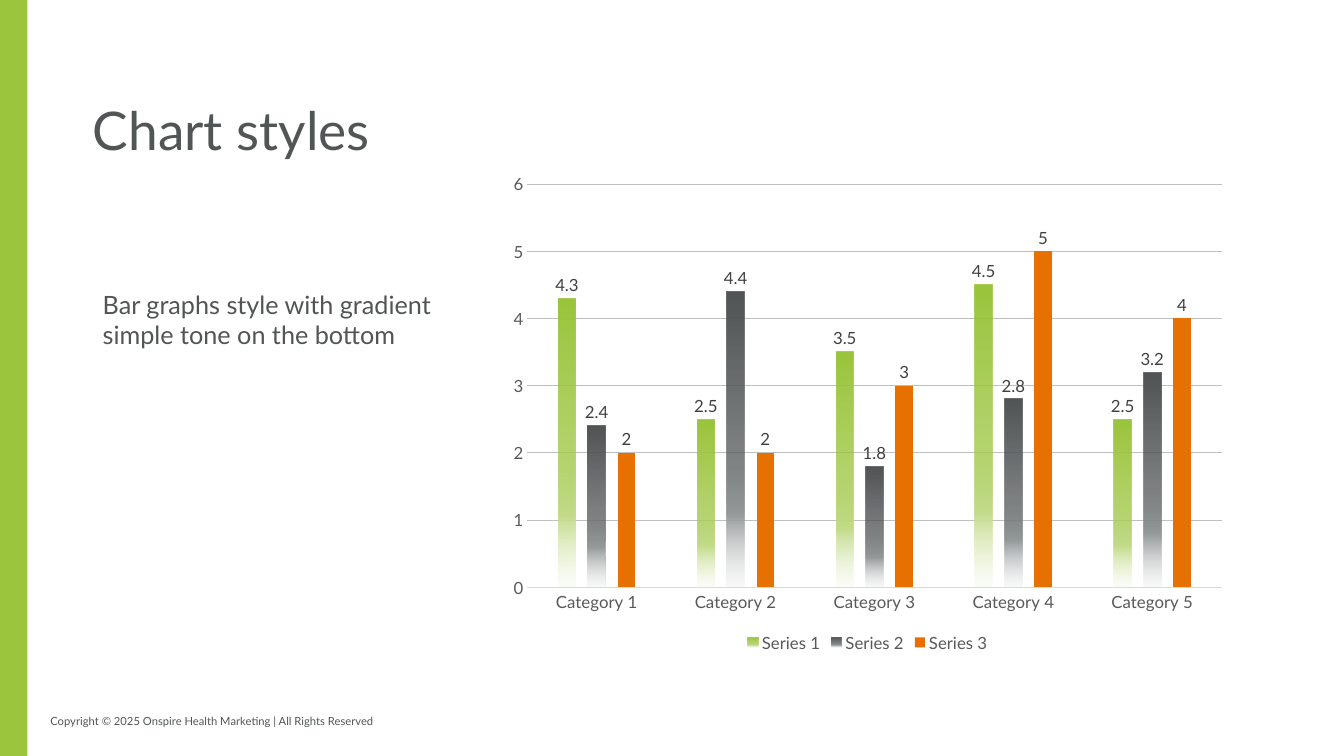
from lxml.etree import SubElement
from pptx import Presentation
from pptx.chart.data import CategoryChartData as ChartData
from pptx.dml.color import RGBColor
from pptx.enum.chart import XL_CHART_TYPE as ChartType
from pptx.enum.chart import XL_LABEL_POSITION as LabelPosition
from pptx.enum.chart import XL_LEGEND_POSITION as LegendPosition
from pptx.enum.chart import XL_TICK_MARK as TickMark
from pptx.enum.shapes import MSO_SHAPE as Shape
from pptx.enum.text import MSO_ANCHOR as Anchor
from pptx.oxml.ns import qn
from pptx.util import Cm, Pt

FONT = "Lato"
GREEN, GRAY, ORANGE = "9BC53C", "525556", "E67100"
AXIS_TEXT, LABEL_TEXT = "595959", "404040"
CATEGORIES = [f"Category {number}" for number in range(1, 6)]
SERIES = {
    "Series 1": (4.3, 2.5, 3.5, 4.5, 2.5),
    "Series 2": (2.4, 4.4, 1.8, 2.8, 3.2),
    "Series 3": (2, 2, 3, 5, 4),
}
FADES = [
    [(0, GREEN, 100), (51, GREEN, 75), (75, "C3DC8A", 100), (100, "EBF3D8", 15)],
    [(0, "515556", 100), (51, "515556", 75), (75, "959A9B", 100), (100, "DCDDDE", 15)],
]


def paint(color_format, color):
    """Set a colour format to a hex colour."""
    color_format.rgb = RGBColor.from_string(color)


def fill_solid(fill, color):
    """Give a fill one plain colour."""
    fill.solid()
    paint(fill.fore_color, color)


def style_font(font, size, color):
    """Set the typeface, size and colour of a font."""
    font.name = FONT
    font.size = Pt(size)
    paint(font.color, color)


def add_bar(page, left, top, width, height, color):
    """Add a plain rectangle without outline."""
    bar = page.shapes.add_shape(Shape.RECTANGLE, Cm(left), Cm(top), Cm(width), Cm(height))
    bar.shadow.inherit = False
    fill_solid(bar.fill, color)
    bar.line.fill.background()


def add_text(page, text, *, left, top, width, height, size, insets=(0.25, 0.13),
             anchor=Anchor.TOP, spacing=1.0):
    """Add a wrapped text box with one paragraph."""
    box = page.shapes.add_textbox(Cm(left), Cm(top), Cm(width), Cm(height))
    frame = box.text_frame
    frame.word_wrap = True
    frame.vertical_anchor = anchor
    frame.margin_left, frame.margin_top = (Cm(inset) for inset in insets)
    frame.margin_right, frame.margin_bottom = frame.margin_left, frame.margin_top
    para = frame.paragraphs[0]
    para.line_spacing = spacing
    span = para.add_run()
    span.text = text
    style_font(span.font, size, GRAY)


def fill_fade(series, stops):
    """Fill a series with a downward gradient of (percent, colour, opacity) stops."""
    series.format.fill.gradient()
    gradient = series.format.fill._xPr.find(qn("a:gradFill"))
    for child in list(gradient):
        gradient.remove(child)
    stop_list = SubElement(gradient, qn("a:gsLst"))
    for percent, color, opacity in stops:
        stop = SubElement(stop_list, qn("a:gs"), pos=str(percent * 1000))
        tone = SubElement(stop, qn("a:srgbClr"), val=color)
        if opacity < 100:
            SubElement(tone, qn("a:alpha"), val=str(opacity * 1000))
    SubElement(gradient, qn("a:lin"), ang="5400000", scaled="0")


def style_axis(axis):
    """Remove the tick marks of an axis and style its labels."""
    axis.major_tick_mark = axis.minor_tick_mark = TickMark.NONE
    style_font(axis.tick_labels.font, 12, AXIS_TEXT)


def style_line(line, color):
    """Make a thin line in one colour."""
    line.width = Pt(0.75)
    fill_solid(line.fill, color)


def label_values(series):
    """Show the values above the bars of a series."""
    labels = series.data_labels
    labels.show_value = True
    labels.position = LabelPosition.OUTSIDE_END
    style_font(labels.font, 12, LABEL_TEXT)


def add_column_chart(page, left, top, width, height):
    """Add the clustered columns with axes, labels and legend."""
    data = ChartData()
    data.categories = CATEGORIES
    for name, values in SERIES.items():
        data.add_series(name, values)
    chart = page.shapes.add_chart(ChartType.COLUMN_CLUSTERED, Cm(left), Cm(top),
                                  Cm(width), Cm(height), data).chart
    chart.has_title = False
    style_font(chart.font, 10, "000000")

    style_axis(chart.category_axis)
    style_line(chart.category_axis.format.line, "D9D9D9")
    value_axis = chart.value_axis
    style_axis(value_axis)
    value_axis.minimum_scale, value_axis.maximum_scale = 0, 6
    value_axis.major_unit = 1
    value_axis.format.line.fill.background()
    style_line(value_axis.major_gridlines.format.line, "BFBFBF")

    chart.has_legend = True
    chart.legend.position = LegendPosition.BOTTOM
    chart.legend.include_in_layout = False
    style_font(chart.legend.font, 12, AXIS_TEXT)

    plot = chart.plots[0]
    plot.gap_width, plot.overlap = 355, -70
    plot.vary_by_categories = False
    for series in plot.series:
        series.invert_if_negative = False
        label_values(series)
    for series, stops in zip(plot.series, FADES):
        fill_fade(series, stops)
    fill_solid(plot.series[2].format.fill, ORANGE)


def main():
    """Build the slide and save it."""
    deck = Presentation()
    deck.slide_width, deck.slide_height = Cm(33.87), Cm(19.05)
    page = deck.slides.add_slide(deck.slide_layouts[6])
    add_bar(page, 0, 0, 0.69, 19.05, GREEN)
    add_text(page, "Copyright © 2025 Onspire Health Marketing | All Rights Reserved",
             left=1.27, top=17.65, width=8.48, height=1.02, size=8,
             insets=(0, 0), anchor=Anchor.MIDDLE)
    add_text(page, "Chart styles", left=2.34, top=2.51, width=21.72, height=1.73,
             size=38, insets=(0, 0.13), spacing=0.9)
    add_column_chart(page, 12.57, 4.14, 18.59, 12.4)
    add_text(page, "Bar graphs style with gradient simple tone on the bottom",
             left=2.34, top=7.16, width=8.99, height=1.8, size=18)
    deck.save("out.pptx")


if __name__ == "__main__":
    main()
